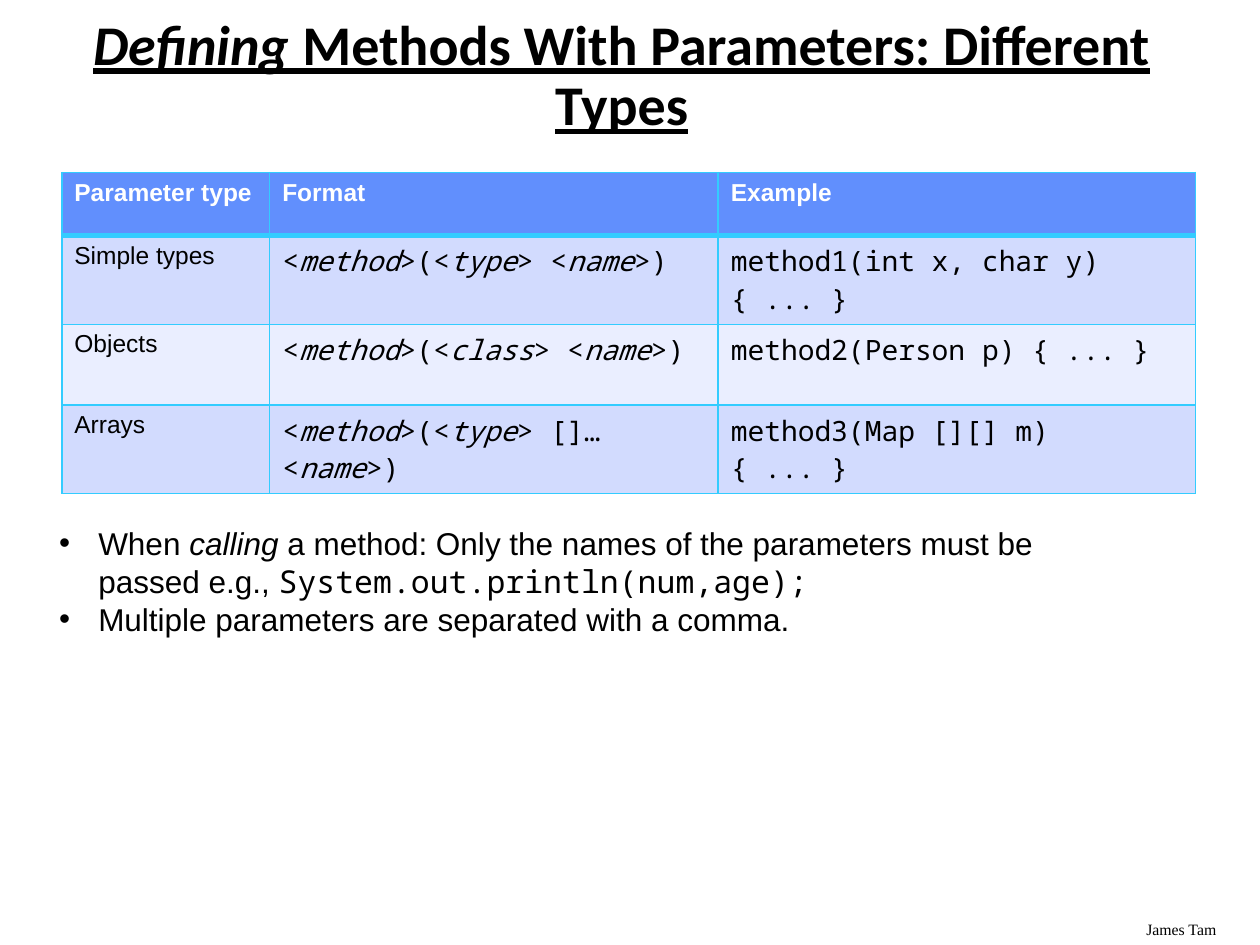
from dataclasses import dataclass

from lxml.etree import SubElement
from pptx import Presentation
from pptx.dml.color import RGBColor
from pptx.enum.text import MSO_ANCHOR, MSO_AUTO_SIZE, PP_ALIGN
from pptx.oxml.ns import qn
from pptx.util import Inches, Pt

SANS, MONO = "Arial", "Noto Sans Mono"
BLACK, WHITE, LINE = "000000", "FFFFFF", "33CCFF"
HEADER_FILL, BAND_FILLS = "618FFD", ("D2DBFE", "EAEEFF")
COLUMN_WIDTHS = (1.65, 3.56, 3.79)
ROW_HEIGHTS = (0.5, 0.5, 0.64, 0.5)


@dataclass
class Style:
    font: str
    size: int
    color: str = BLACK
    bold: bool = False
    underline: bool = False


HEADER = Style(SANS, 14, WHITE, bold=True)
LABEL = Style(SANS, 14)
CODE = Style(MONO, 16)
TITLE = Style("Calibri", 32, bold=True, underline=True)
BULLET = Style(SANS, 18)

HEADINGS = ("Parameter type", "Format", "Example")
# *stars* mark italics, `backticks` mark code
METHODS = (
    ("Simple types", "<*method*>(<*type*> <*name*>)", "method1(int x, char y) { ... }"),
    ("Objects", "<*method*>(<*class*> <*name*>)", "method2(Person p) { ... }"),
    ("Arrays", "<*method*>(<*type*> []… <*name*>)", "method3(Map [][] m) { ... }"),
)
BULLETS = (
    "When *calling* a method: Only the names of the parameters must be "
    "passed e.g., `System.out.println(num,age);`",
    "Multiple parameters are separated with a comma.",
)


def rgb(color: str) -> RGBColor:
    return RGBColor.from_string(color)


def write(p, text: str, style: Style) -> None:
    """Fill a paragraph with marked-up text."""
    f = p.font
    f.name, f.size, f.bold, f.underline = style.font, Pt(style.size), style.bold, style.underline
    f.color.rgb = rgb(style.color)
    for i, part in enumerate(text.split("`")):
        for j, chunk in enumerate(part.split("*")):
            if chunk:
                r = p.add_run()
                r.text = chunk
                if i % 2:
                    r.font.name = MONO
                if j % 2:
                    r.font.italic = True


def place(sp, left: float, top: float, width: float, height: float) -> None:
    sp.left, sp.top, sp.width, sp.height = map(Inches, (left, top, width, height))
    sp.text_frame.auto_size = MSO_AUTO_SIZE.NONE


def set_borders(cell, top: float = 1, bottom: float = 1) -> None:
    tc_pr = cell._tc.get_or_add_tcPr()
    for side, width in (("L", 1), ("R", 1), ("T", top), ("B", bottom)):
        ln = SubElement(tc_pr, qn(f"a:ln{side}"), w=str(Pt(width)))
        SubElement(SubElement(ln, qn("a:solidFill")), qn("a:srgbClr"), val=LINE)


def add_methods_table(s) -> None:
    rows = (HEADINGS, *METHODS)
    table = s.shapes.add_table(
        len(rows), len(HEADINGS), Inches(0.49), Inches(1.37),
        Inches(sum(COLUMN_WIDTHS)), Inches(sum(ROW_HEIGHTS)),
    ).table
    for column, width in zip(table.columns, COLUMN_WIDTHS):
        column.width = Inches(width)
    for i, texts in enumerate(rows):
        table.rows[i].height = Inches(ROW_HEIGHTS[i])
        for j, text in enumerate(texts):
            cell = table.cell(i, j)
            set_borders(cell, top=3 if i == 1 else 1, bottom=3 if i == 0 else 1)
            cell.fill.solid()
            cell.fill.fore_color.rgb = rgb(BAND_FILLS[(i - 1) % 2] if i else HEADER_FILL)
            style = HEADER if i == 0 else CODE if j else LABEL
            write(cell.text_frame.paragraphs[0], text, style)


def add_bullets(sp) -> None:
    place(sp, 0.47, 4.11, 8.62, 1.25)
    tf = sp.text_frame
    tf.margin_left = 0
    tf.vertical_anchor = MSO_ANCHOR.TOP
    for i, text in enumerate(BULLETS):
        p = tf.add_paragraph() if i else tf.paragraphs[0]
        p.space_before = Pt(0)
        p_pr = p._p.get_or_add_pPr()
        p_pr.set("marL", str(Inches(0.31)))
        p_pr.set("indent", str(-Inches(0.31)))
        SubElement(p_pr, qn("a:buFont"), typeface=SANS)
        SubElement(p_pr, qn("a:buChar"), char="•")
        write(p, text, BULLET)


def main() -> None:
    prs = Presentation()
    prs.slide_width, prs.slide_height = Inches(10), Inches(7.5)
    s = prs.slides.add_slide(prs.slide_layouts[1])

    title = s.shapes.title
    place(title, 0.47, 0.33, 8.93, 0.57)
    title.text_frame.vertical_anchor = MSO_ANCHOR.MIDDLE
    p = title.text_frame.paragraphs[0]
    p.alignment, p.line_spacing = PP_ALIGN.CENTER, 0.9
    write(p, "*Defining* Methods With Parameters: Different Types", TITLE)

    add_methods_table(s)
    add_bullets(s.placeholders[1])

    author = s.shapes.add_textbox(0, 0, 0, 0)
    place(author, 9, 7.25, 1, 0.25)
    author.text_frame.word_wrap = True
    write(author.text_frame.paragraphs[0], "James Tam", Style("Times New Roman", 9))

    prs.save("out.pptx")


if __name__ == "__main__":
    main()
